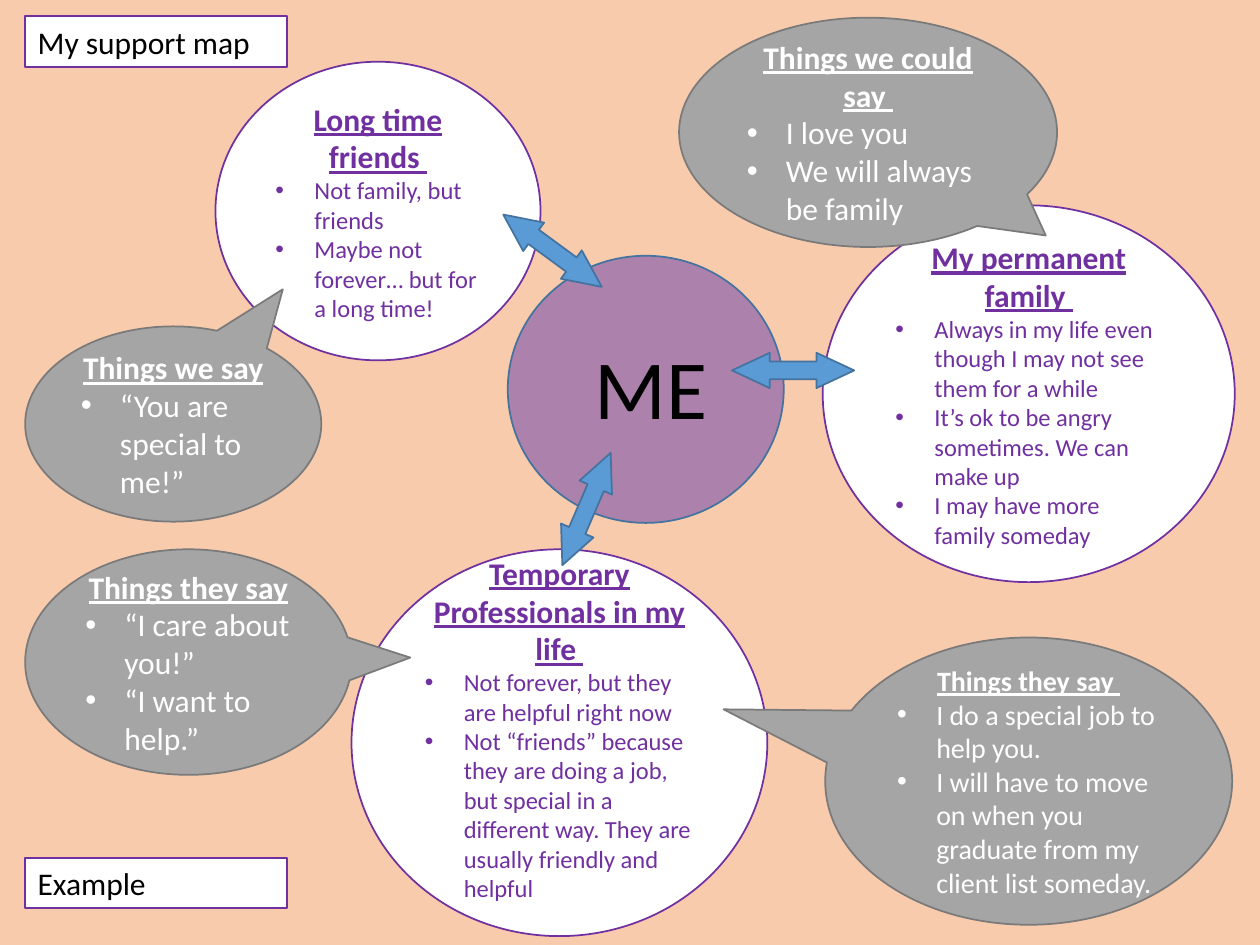
from lxml import etree
from pptx import Presentation
from pptx.dml.color import RGBColor
from pptx.enum.shapes import MSO_SHAPE
from pptx.enum.text import MSO_ANCHOR, PP_ALIGN
from pptx.oxml.ns import qn
from pptx.util import Inches, Pt

OVAL = MSO_SHAPE.OVAL
CALLOUT = MSO_SHAPE.OVAL_CALLOUT
ARROW = MSO_SHAPE.LEFT_RIGHT_ARROW
MIDDLE = MSO_ANCHOR.MIDDLE
LEFT, CENTER = PP_ALIGN.LEFT, PP_ALIGN.CENTER

COLORS = {
    "background": "F8CBAD",
    "me": "AC82AC",
    "white": "FFFFFF",
    "black": "000000",
    "purple": "7030A0",
    "gray": "A5A5A5",
    "gray_line": "7A7A7A",
    "blue": "5B9BD5",
    "blue_line": "43739E",
}


def paint(shape, fill, line):
    shape.shadow.inherit = False
    shape.fill.solid()
    shape.fill.fore_color.rgb = RGBColor.from_string(COLORS[fill])
    shape.line.color.rgb = RGBColor.from_string(COLORS[line])
    shape.line.width = Pt(1)


def write(paragraph, text, size, color, alignment=LEFT):
    paragraph.text = text
    paragraph.alignment = alignment
    paragraph.font.name = "Calibri"
    paragraph.font.size = Pt(size)
    paragraph.font.color.rgb = RGBColor.from_string(COLORS[color])


presentation = Presentation()
presentation.slide_width = Inches(10)
presentation.slide_height = Inches(7.5)
slide = presentation.slides.add_slide(presentation.slide_layouts[6])
slide.background.fill.solid()
slide.background.fill.fore_color.rgb = RGBColor.from_string(COLORS["background"])

me_circle = slide.shapes.add_shape(OVAL, Inches(4.03), Inches(2.03), Inches(2.19), Inches(2.12))
paint(me_circle, "me", "blue_line")
me_label = slide.shapes.add_textbox(Inches(4.29), Inches(2.61), Inches(1.76), Inches(0.91))
me_label.text_frame.word_wrap = True
write(me_label.text_frame.paragraphs[0], "ME", 48, "black", CENTER)

bubbles = [
    (OVAL, (6.53, 1.63, 3.27, 2.99), None, 18, 14, 0.05, "My permanent family ", [
        "Always in my life even though I may not see them for a while",
        "It’s ok to be angry sometimes. We can make up",
        "I may have more family someday",
    ]),
    (OVAL, (1.71, 0.49, 2.58, 2.37), None, 18, 14, 0.05, "Long time friends ", [
        "Not family, but friends",
        "Maybe not forever… but for a long time!",
    ]),
    (CALLOUT, (5.39, 0.14, 3, 1.82), (0.47, 0.45), 18, 18, 0.05, "Things we could say ", [
        "I love you",
        "We will always be family",
    ]),
    (CALLOUT, (0.2, 2.59, 2.35, 1.55), (0.37, -0.69), 18, 18, 0.05, "Things we say ", [
        "“You are special to me!”",
    ]),
    (OVAL, (2.79, 4.36, 3.3, 3.07), None, 18, 14, 0.28, "Temporary Professionals in my life ", [
        "Not forever, but they are helpful right now",
        "Not “friends” because they are doing a job, but special in a different way. "
        "They are usually friendly and helpful",
    ]),
    (CALLOUT, (0.2, 4.36, 2.59, 1.79), (0.68, -0.02), 18, 18, 0.05, "Things they say ", [
        "“I care about you!”",
        "“I want to help.”",
    ]),
    (CALLOUT, (6.55, 5.06, 3.23, 2.28), (-0.75, -0.25), 16, 16, 0.05, "Things they say ", [
        "I do a special job to help you.",
        "I will have to move on when you graduate from my client list someday.",
    ]),
]
for kind, box, tail, title_size, item_size, bottom, title, items in bubbles:
    bubble = slide.shapes.add_shape(kind, *map(Inches, box))
    if tail:
        bubble.adjustments[0], bubble.adjustments[1] = tail
        paint(bubble, "gray", "gray_line")
        text_color = "white"
    else:
        paint(bubble, "white", "purple")
        text_color = "purple"
    frame = bubble.text_frame
    frame.word_wrap = True
    frame.vertical_anchor = MIDDLE
    frame.margin_bottom = Inches(bottom)
    heading = frame.paragraphs[0]
    write(heading, title, title_size, text_color, CENTER)
    heading.font.bold = True
    heading.font.underline = True
    for item in items:
        paragraph = frame.add_paragraph()
        write(paragraph, item, item_size, text_color)
        properties = paragraph._p.get_or_add_pPr()
        properties.set("marL", str(Inches(0.31)))
        properties.set("indent", str(Inches(-0.31)))
        bullet_font = etree.Element(qn("a:buFont"), typeface="Arial")
        bullet = etree.Element(qn("a:buChar"), char="•")
        properties.insert(0, bullet_font)
        properties.insert(1, bullet)

for left, top, rotation in [(3.9, 1.85, 36.3), (5.81, 2.8, 0), (4.17, 3.9, 293.3)]:
    arrow = slide.shapes.add_shape(ARROW, Inches(left), Inches(top), Inches(0.97), Inches(0.28))
    arrow.adjustments[0], arrow.adjustments[1] = 0.5, 1.07
    arrow.rotation = rotation
    paint(arrow, "blue", "blue_line")

for top, text in [(0.13, "My support map"), (6.81, "Example")]:
    label = slide.shapes.add_shape(MSO_SHAPE.RECTANGLE, Inches(0.2), Inches(top), Inches(2.08), Inches(0.4))
    paint(label, "white", "purple")
    label.text_frame.word_wrap = True
    write(label.text_frame.paragraphs[0], text, 18, "black")

presentation.save("out.pptx")
